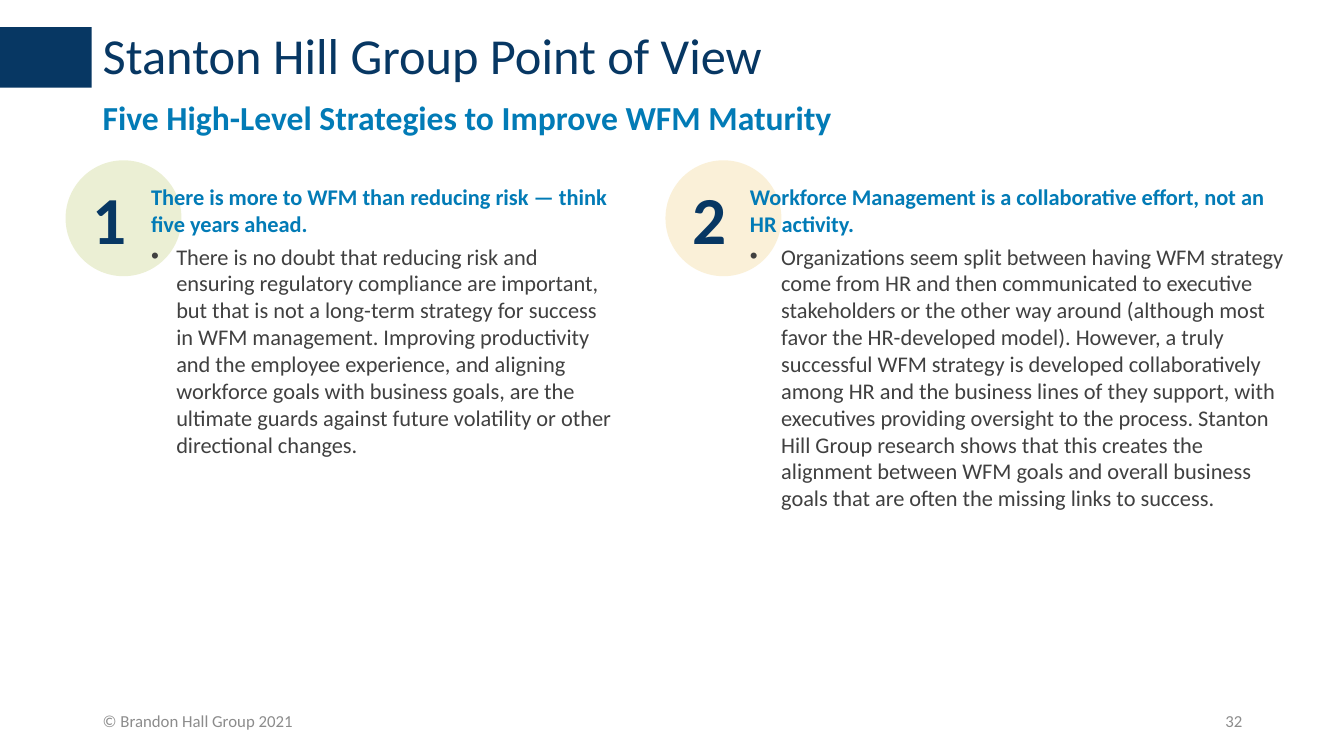
from dataclasses import dataclass

from lxml.etree import SubElement
from pptx import Presentation
from pptx.dml.color import RGBColor
from pptx.enum.shapes import MSO_SHAPE as Preset
from pptx.enum.text import MSO_ANCHOR as Anchor, PP_ALIGN as Align
from pptx.oxml.ns import qn
from pptx.shapes.autoshape import Shape
from pptx.slide import Slide
from pptx.text.text import _Paragraph as Paragraph
from pptx.util import Inches, Pt


@dataclass(frozen=True)
class Theme:
    font: str = "Calibri"
    navy: str = "073763"
    blue: str = "027BB6"
    body: str = "404040"
    footer: str = "8C8C8C"
    title_size: int = 36
    subtitle_size: int = 24
    number_size: int = 48
    body_size: int = 16
    footer_size: int = 12


@dataclass(frozen=True)
class Box:
    left: float
    top: float
    width: float
    height: float

    def lengths(self) -> tuple:
        return tuple(Inches(n) for n in (self.left, self.top, self.width, self.height))


@dataclass(frozen=True)
class Strategy:
    number: str
    circle_left: float
    circle_color: str
    box: Box
    indent: float
    hanging: float
    heading: str
    detail: str


THEME = Theme()
CIRCLE_TOP, CIRCLE_SIZE, CIRCLE_OPACITY = 1.59, 1.15, 21

STRATEGIES = [
    Strategy(
        "1", 0.65, "A5B836", Box(0.9, 1.77, 5.29, 4.88), 0.5, 0.25,
        "There is more to WFM than reducing risk — think five years ahead.",
        "There is no doubt that reducing risk and ensuring regulatory compliance are "
        "important, but that is not a long-term strategy for success in WFM management. "
        "Improving productivity and the employee experience, and aligning workforce goals "
        "with business goals, are the ultimate guards against future volatility or other "
        "directional changes.",
    ),
    Strategy(
        "2", 6.6, "EABC47", Box(6.67, 1.77, 6.17, 3.44), 0.67, 0.31,
        "Workforce Management is a collaborative effort, not an HR activity.",
        "Organizations seem split between having WFM strategy come from HR and then "
        "communicated to executive stakeholders or the other way around (although most "
        "favor the HR-developed model). However, a truly successful WFM strategy is "
        "developed collaboratively among HR and the business lines of they support, with "
        "executives providing oversight to the process. Stanton Hill Group research shows "
        "that this creates the alignment between WFM goals and overall business goals that "
        "are often the missing links to success.",
    ),
]


def style(paragraph: Paragraph, size: int, color: str, bold: bool = False) -> None:
    for run in paragraph.runs:
        run.font.name = THEME.font
        run.font.size = Pt(size)
        run.font.bold = bold
        run.font.color.rgb = RGBColor.from_string(color)


def add_label(slide: Slide, box: Box, text: str, size: int, color: str,
              bold: bool = False, anchor: Anchor = Anchor.TOP,
              align: Align = Align.LEFT) -> Paragraph:
    frame = slide.shapes.add_textbox(*box.lengths()).text_frame
    frame.word_wrap = True
    frame.vertical_anchor = anchor
    frame.text = text
    paragraph = frame.paragraphs[0]
    paragraph.alignment = align
    style(paragraph, size, color, bold)
    return paragraph


def add_filled(slide: Slide, preset: Preset, box: Box, color: str) -> Shape:
    shape = slide.shapes.add_shape(preset, *box.lengths())
    shape.shadow.inherit = False
    shape.fill.solid()
    shape.fill.fore_color.rgb = RGBColor.from_string(color)
    shape.line.fill.background()
    return shape


def set_indent(paragraph: Paragraph, margin: float, hanging: float = 0) -> None:
    properties = paragraph._p.get_or_add_pPr()
    properties.set("marL", str(Inches(margin)))
    properties.set("indent", str(-Inches(hanging)))


def add_number(slide: Slide, strategy: Strategy) -> None:
    """Draw the translucent circle with the strategy's number inside."""
    box = Box(strategy.circle_left, CIRCLE_TOP, CIRCLE_SIZE, CIRCLE_SIZE)
    circle = add_filled(slide, Preset.OVAL, box, strategy.circle_color)
    color = circle._element.spPr.find(qn("a:solidFill"))[0]
    SubElement(color, qn("a:alpha")).set("val", str(CIRCLE_OPACITY * 1000))

    frame = circle.text_frame
    frame.margin_top = frame.margin_bottom = 0
    frame.vertical_anchor = Anchor.TOP
    frame.text = strategy.number
    frame.paragraphs[0].alignment = Align.LEFT
    style(frame.paragraphs[0], THEME.number_size, THEME.navy, bold=True)


def add_strategy_text(slide: Slide, strategy: Strategy) -> None:
    frame = slide.shapes.add_textbox(*strategy.box.lengths()).text_frame
    frame.word_wrap = True
    frame.text = strategy.heading
    heading, detail = frame.paragraphs[0], frame.add_paragraph()
    detail.text = strategy.detail
    set_indent(heading, strategy.indent)
    set_indent(detail, strategy.indent + strategy.hanging, strategy.hanging)
    for paragraph in (heading, detail):
        paragraph.space_after = Pt(4)

    properties = detail._p.get_or_add_pPr()
    SubElement(properties, qn("a:buFont")).set("typeface", "Arial")
    SubElement(properties, qn("a:buChar")).set("char", "•")
    style(heading, THEME.body_size, THEME.blue, bold=True)
    style(detail, THEME.body_size, THEME.body)


def main() -> None:
    deck = Presentation()
    deck.slide_width, deck.slide_height = Inches(13.33), Inches(7.5)
    slide = deck.slides.add_slide(deck.slide_layouts[6])

    add_filled(slide, Preset.RECTANGLE, Box(-0.01, 0.27, 0.92, 0.6), THEME.navy)
    for strategy in STRATEGIES:
        add_number(slide, strategy)

    title = add_label(slide, Box(0.92, 0.26, 11.5, 1.58),
                      "Stanton Hill Group Point of View", THEME.title_size, THEME.navy)
    title.line_spacing = 0.9
    add_label(slide, Box(0.92, 0.91, 10.08, 0.5),
              "Five High-Level Strategies to Improve WFM Maturity",
              THEME.subtitle_size, THEME.blue, bold=True)
    for strategy in STRATEGIES:
        add_strategy_text(slide, strategy)

    add_label(slide, Box(0.92, 6.95, 4.5, 0.4), "© Brandon Hall Group 2021",
              THEME.footer_size, THEME.footer, anchor=Anchor.MIDDLE)
    add_label(slide, Box(9.42, 6.95, 3, 0.4), "32", THEME.footer_size, THEME.footer,
              anchor=Anchor.MIDDLE, align=Align.RIGHT)
    deck.save("out.pptx")


if __name__ == "__main__":
    main()
